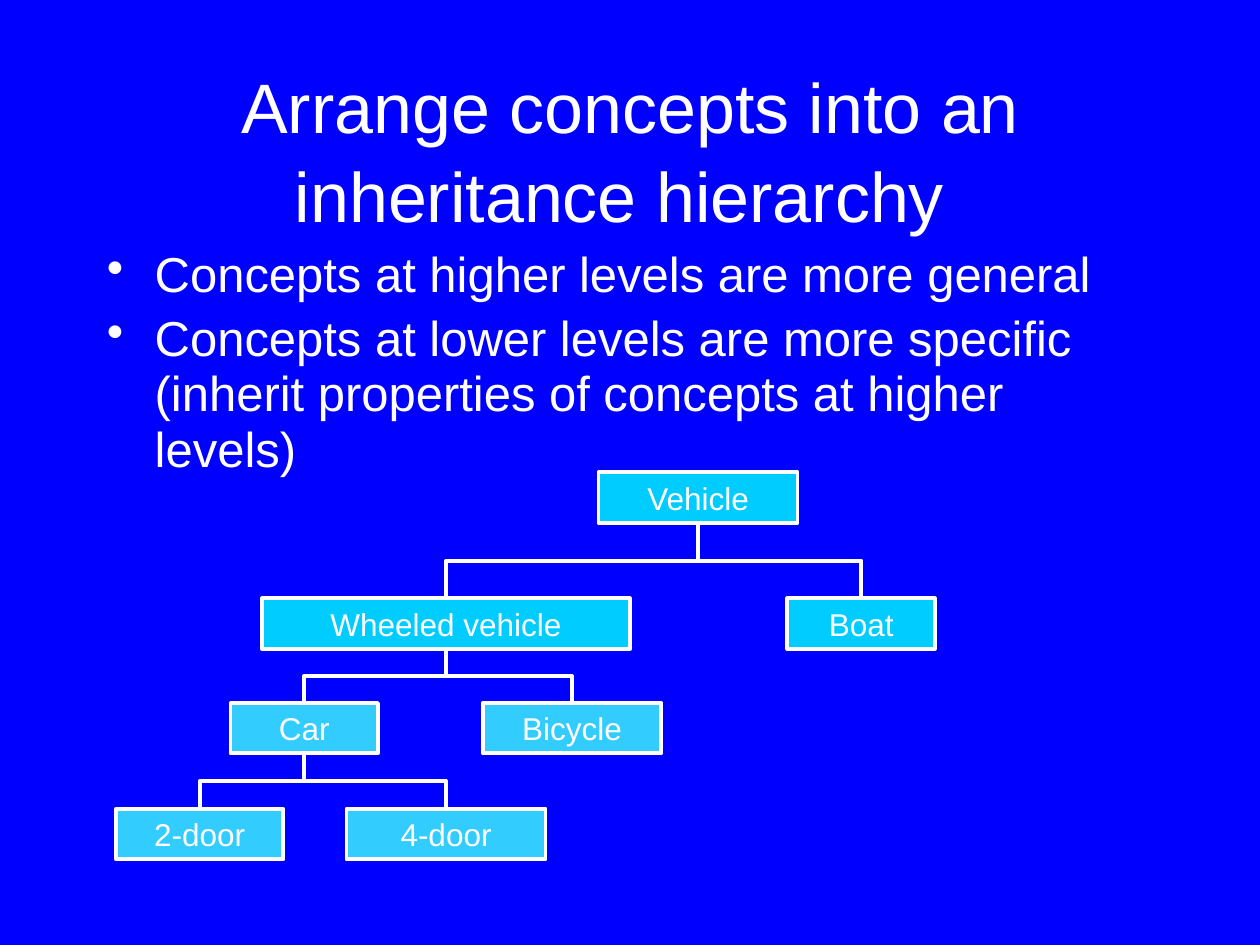
import pptx
import pptx.util
import pptx.dml.color
import pptx.enum.shapes
import pptx.enum.text
import pptx.oxml
import pptx.oxml.ns
from pptx.util import Inches

WHITE, BLUE, CYAN, SKY = "FFFFFF", "0000FF", "00CCFF", "33CCFF"
NODE_HEIGHT = 0.4
NODES = {
    "Vehicle": (4.75, 3.75, 1.58, CYAN),
    "Wheeled vehicle": (2.08, 4.75, 2.92, CYAN),
    "Boat": (6.25, 4.75, 1.17, CYAN),
    "Car": (1.83, 5.58, 1.17, SKY),
    "Bicycle": (3.83, 5.58, 1.42, SKY),
    "4-door": (2.75, 6.42, 1.58, SKY),
    "2-door": (0.92, 6.42, 1.33, SKY),
}
CHILDREN = {
    "Vehicle": ("Wheeled vehicle", "Boat"),
    "Wheeled vehicle": ("Car", "Bicycle"),
    "Car": ("2-door", "4-door"),
}


def color(value):
    return pptx.dml.color.RGBColor.from_string(value)


def add_text(para, text, size, fill=WHITE, font="Arial"):
    span = para.add_run()
    span.text = text
    span.font.name = font
    span.font.size = pptx.util.Pt(size)
    span.font.color.rgb = color(fill)


def add_text_box(page, left, top, width, height):
    box = page.shapes.add_textbox(Inches(left), Inches(top), Inches(width), Inches(height))
    box.text_frame.word_wrap = True
    return box.text_frame


def add_title(page, left, top, width, height):
    frame = add_text_box(page, left, top, width, height)
    frame.vertical_anchor = pptx.enum.text.MSO_ANCHOR.MIDDLE
    para = frame.paragraphs[0]
    para.alignment = pptx.enum.text.PP_ALIGN.CENTER
    para.line_spacing = pptx.util.Pt(52)
    add_text(para, "Arrange concepts into an inheritance hierarchy", 40)
    add_text(para, " ", 44)


def add_bullets(page, left, top, width, height, items):
    frame = add_text_box(page, left, top, width, height)
    for index, item in enumerate(items):
        para = frame.add_paragraph() if index else frame.paragraphs[0]
        para.line_spacing = 0.94
        para.space_before = pptx.util.Pt(5)
        properties = para._p.get_or_add_pPr()
        properties.set("marL", str(Inches(0.38)))
        properties.set("indent", str(Inches(-0.38)))
        bullet = pptx.oxml.parse_xml(
            f'<a:buChar {pptx.oxml.ns.nsdecls("a")} char="•"/>')
        properties.append(bullet)
        add_text(para, item, 28)


def add_node(page, name, left, top, width, fill):
    box = page.shapes.add_shape(
        pptx.enum.shapes.MSO_SHAPE.RECTANGLE,
        Inches(left), Inches(top), Inches(width), Inches(NODE_HEIGHT))
    box.shadow.inherit = False
    box.fill.solid()
    box.fill.fore_color.rgb = color(fill)
    box.line.color.rgb = color(WHITE)
    box.line.width = pptx.util.Pt(2.25)
    frame = box.text_frame
    frame.word_wrap = True
    frame.vertical_anchor = pptx.enum.text.MSO_ANCHOR.TOP
    para = frame.paragraphs[0]
    para.alignment = pptx.enum.text.PP_ALIGN.CENTER
    add_text(para, name, 18)


def add_branch(page, parent, child):
    start_x, start_y = parent[0] + parent[2] / 2, parent[1] + NODE_HEIGHT
    end_x, end_y = child[0] + child[2] / 2, child[1]
    center_x, center_y = (start_x + end_x) / 2, (start_y + end_y) / 2
    goes_left = end_x < start_x
    half_width = (end_y - start_y) / 2 * (1 if goes_left else -1)
    half_height = abs(end_x - start_x) / 2
    branch = page.shapes.add_connector(
        pptx.enum.shapes.MSO_CONNECTOR.ELBOW,
        Inches(center_x - half_width), Inches(center_y - half_height),
        Inches(center_x + half_width), Inches(center_y + half_height))
    branch.line.color.rgb = color(WHITE)
    branch.line.width = pptx.util.Pt(2.25)
    properties = branch._element.spPr
    properties.xfrm.set("rot", str((90 if goes_left else 270) * 60000))
    properties.append(pptx.oxml.parse_xml(
        f'<a:effectLst {pptx.oxml.ns.nsdecls("a")}/>'))


def add_hierarchy(page):
    for name, place in NODES.items():
        add_node(page, name, *place)
    for parent, children in CHILDREN.items():
        for child in children:
            add_branch(page, NODES[parent], NODES[child])


def main():
    deck = pptx.Presentation()
    deck.slide_width, deck.slide_height = Inches(10), Inches(7.5)
    page = deck.slides.add_slide(deck.slide_layouts[6])
    page.background.fill.solid()
    page.background.fill.fore_color.rgb = color(BLUE)
    add_title(page, 0.75, 0.42, 8.5, 1.5)
    add_bullets(page, 0.75, 1.92, 8.5, 1.58, [
        "Concepts at higher levels are more general",
        "Concepts at lower levels are more specific "
        "(inherit properties of concepts at higher levels)",
    ])
    add_hierarchy(page)
    deck.save("out.pptx")


if __name__ == "__main__":
    main()
